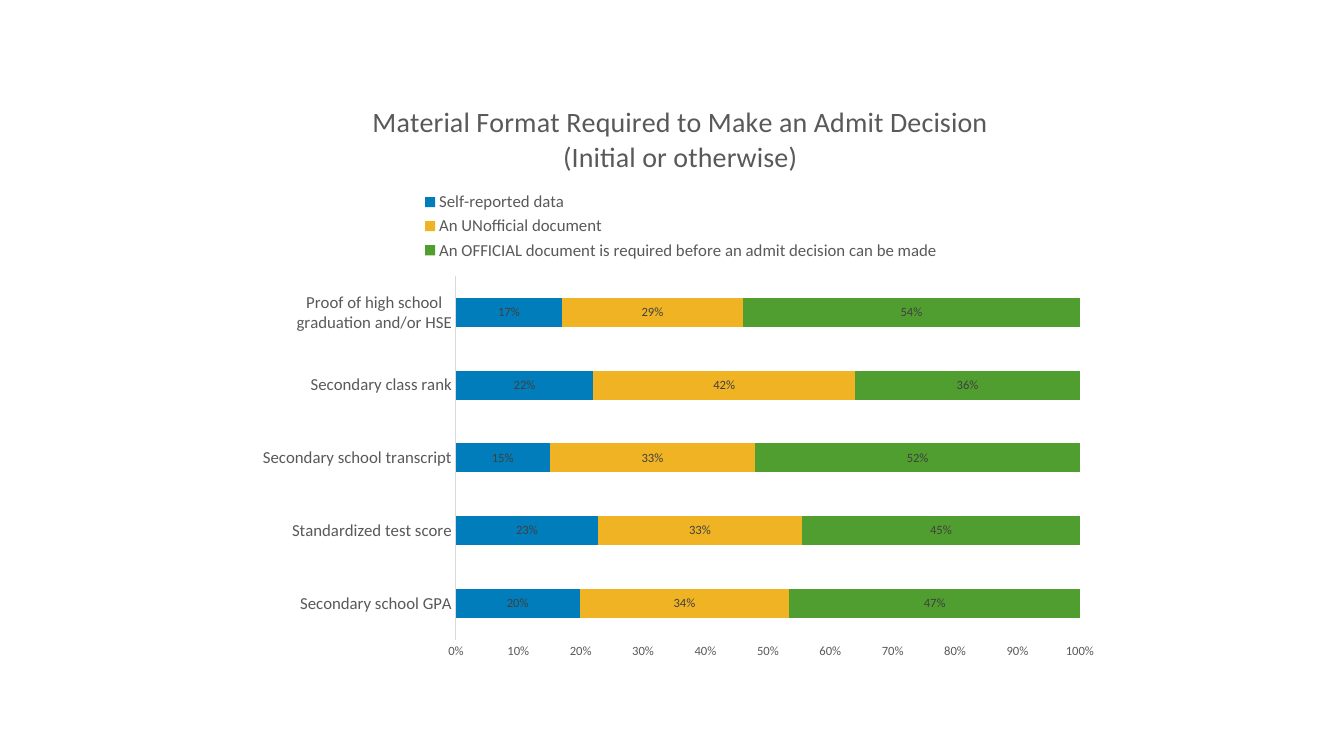
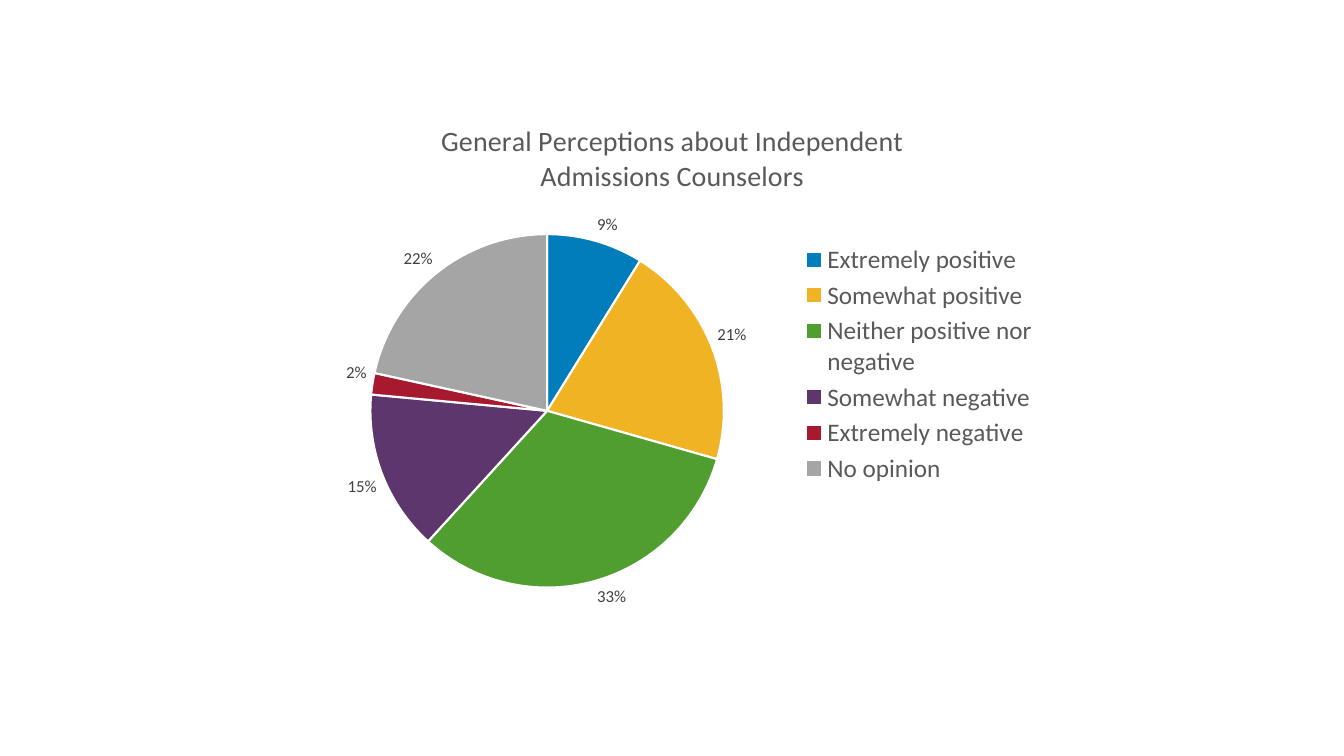
from lxml import etree
from pptx import Presentation
from pptx.chart.data import CategoryChartData
from pptx.dml.color import RGBColor
from pptx.enum.chart import XL_CHART_TYPE, XL_LABEL_POSITION, XL_LEGEND_POSITION, XL_TICK_MARK
from pptx.oxml.ns import qn
from pptx.util import Cm, Pt

STACKED_BAR = XL_CHART_TYPE.BAR_STACKED_100
PIE = XL_CHART_TYPE.PIE
LABEL_CENTER = XL_LABEL_POSITION.CENTER
LABEL_OUTSIDE = XL_LABEL_POSITION.OUTSIDE_END
LEGEND_TOP = XL_LEGEND_POSITION.TOP
LEGEND_RIGHT = XL_LEGEND_POSITION.RIGHT
NO_TICK = XL_TICK_MARK.NONE

FONT = "Calibri"
TEXT_GRAY = "595959"
LABEL_GRAY = "404040"
AXIS_GRAY = "D9D9D9"
WHITE = "FFFFFF"
PALETTE = ["007DBA", "F0B323", "509E2F", "5E366E", "A6192E", "A5A5A5"]
PERCENT = "0%"

FORMATS = ["Self-reported data", "An UNofficial document",
           "An OFFICIAL document is required before an admit decision can be made"]
MATERIALS = {
    "Secondary school GPA": (0.20, 0.34, 0.47),
    "Standardized test score": (0.23, 0.33, 0.45),
    "Secondary school transcript": (0.15, 0.33, 0.52),
    "Secondary class rank": (0.22, 0.42, 0.36),
    "Proof of high school graduation and/or HSE": (0.17, 0.29, 0.54),
}
PERCEPTIONS = {
    "Extremely positive": 0.09,
    "Somewhat positive": 0.21,
    "Neither positive nor negative": 0.33,
    "Somewhat negative": 0.15,
    "Extremely negative": 0.02,
    "No opinion": 0.22,
}


def color(value):
    return RGBColor.from_string(value)


def style_font(font, size, fill=TEXT_GRAY):
    font.name = FONT
    font.size = Pt(size)
    font.bold = False
    font.color.rgb = color(fill)


def write_text(text_frame, text, size=20, fill=TEXT_GRAY):
    for index, line in enumerate(text.split("\n")):
        paragraph = text_frame.add_paragraph() if index else text_frame.paragraphs[0]
        run = paragraph.add_run()
        run.text = line
        style_font(run.font, size, fill)


def fill_solid(chart_format, value):
    chart_format.fill.solid()
    chart_format.fill.fore_color.rgb = color(value)


def place_part(chart, part_name, index, **fractions):
    part = chart.element.xpath(f"c:chart/c:{part_name}")[0]
    for old_layout in part.findall(qn("c:layout")):
        part.remove(old_layout)
    layout = etree.Element(qn("c:layout"))
    manual = etree.SubElement(layout, qn("c:manualLayout"))
    settings = {"xMode": "edge", "yMode": "edge", **fractions}
    if part_name == "plotArea":
        settings = {"layoutTarget": "inner", **settings}
    for name, value in settings.items():
        etree.SubElement(manual, qn(f"c:{name}")).set("val", str(value))
    part.insert(index, layout)


def add_titled_chart(slide, box, chart_type, chart_data, title, legend_position, legend_size):
    chart = slide.shapes.add_chart(chart_type, *map(Cm, box), chart_data).chart
    style_font(chart.font, 10, "000000")
    chart.has_title = True
    write_text(chart.chart_title.text_frame, title)
    chart.has_legend = True
    chart.legend.position = legend_position
    chart.legend.include_in_layout = False
    style_font(chart.legend.font, legend_size)
    return chart


def show_labels(plot, position, size):
    plot.has_data_labels = True
    labels = plot.data_labels
    labels.show_value = True
    labels.number_format = PERCENT
    labels.number_format_is_linked = False
    labels.position = position
    style_font(labels.font, size, LABEL_GRAY)


def style_axis(axis, size):
    axis.has_major_gridlines = False
    axis.major_tick_mark = NO_TICK
    axis.minor_tick_mark = NO_TICK
    style_font(axis.tick_labels.font, size)


def add_material_chart(slide, box):
    chart_data = CategoryChartData(number_format=PERCENT)
    chart_data.categories = list(MATERIALS)
    for name, values in zip(FORMATS, zip(*MATERIALS.values())):
        chart_data.add_series(name, values)
    chart = add_titled_chart(
        slide, box, STACKED_BAR, chart_data,
        "Material Format Required to Make an Admit Decision\n(Initial or otherwise)",
        LEGEND_TOP, 12)
    place_part(chart, "title", 1, x=0.14, y=0.03)
    place_part(chart, "plotArea", 0, x=0.24, y=0.33, w=0.72, h=0.62)
    place_part(chart, "legend", 1, x=0.2, y=0.18, w=0.6, h=0.13)

    plot = chart.plots[0]
    plot.gap_width = 150
    plot.overlap = 100
    plot.vary_by_categories = False
    show_labels(plot, LABEL_CENTER, 9)
    for series, value in zip(plot.series, PALETTE):
        fill_solid(series.format, value)

    style_axis(chart.category_axis, 12)
    chart.category_axis.format.line.color.rgb = color(AXIS_GRAY)
    chart.category_axis.format.line.width = Pt(0.75)
    value_axis = chart.value_axis
    style_axis(value_axis, 9)
    value_axis.format.line.fill.background()
    value_axis.minimum_scale = 0
    value_axis.maximum_scale = 1
    value_axis.major_unit = 0.1
    value_axis.tick_labels.number_format = PERCENT
    value_axis.tick_labels.number_format_is_linked = False


def add_perception_chart(slide, box):
    chart_data = CategoryChartData(number_format=PERCENT)
    chart_data.categories = list(PERCEPTIONS)
    chart_data.add_series("Series 1", PERCEPTIONS.values())
    chart = add_titled_chart(
        slide, box, PIE, chart_data,
        "General Perceptions about Independent\nAdmissions Counselors",
        LEGEND_RIGHT, 18)
    place_part(chart, "title", 1, x=0.19, y=0.03)
    place_part(chart, "plotArea", 0, x=0.1, y=0.25, w=0.47, h=0.68)
    place_part(chart, "legend", 1, x=0.67, y=0.26, w=0.32, h=0.48)

    plot = chart.plots[0]
    plot.vary_by_categories = True
    show_labels(plot, LABEL_OUTSIDE, 12)
    for index, value in enumerate(PALETTE):
        slice_format = plot.series[0].points[index].format
        fill_solid(slice_format, value)
        slice_format.line.color.rgb = color(WHITE)
        slice_format.line.width = Pt(1.5)


def add_slide(presentation):
    slide = presentation.slides.add_slide(presentation.slide_layouts[6])
    fill_solid(slide.background, WHITE)
    return slide


def main():
    presentation = Presentation()
    presentation.slide_width = Cm(33.87)
    presentation.slide_height = Cm(19.05)
    add_material_chart(add_slide(presentation), (6.25, 2.08, 21.84, 14.78))
    add_perception_chart(add_slide(presentation), (7.44, 2.62, 18.95, 13.11))
    presentation.save("out.pptx")


if __name__ == "__main__":
    main()
